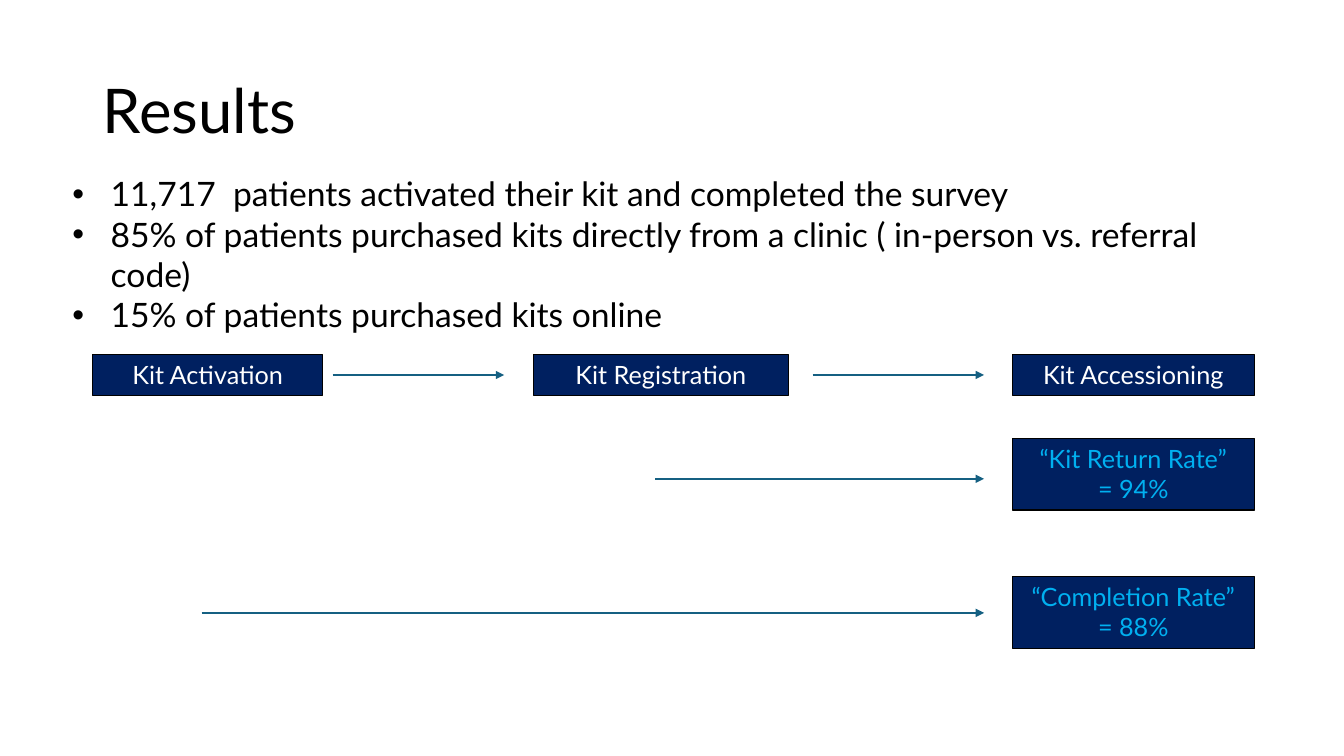
from pptx import Presentation
from pptx.dml.color import RGBColor as RGB
from pptx.enum.shapes import MSO_CONNECTOR as CONNECTOR, MSO_SHAPE as SHAPE
from pptx.enum.text import MSO_ANCHOR as ANCHOR, MSO_AUTO_SIZE as AUTO_SIZE, PP_ALIGN as ALIGN
from pptx.oxml import parse_xml
from pptx.oxml.ns import nsdecls
from pptx.util import Pt

PX = 9144
COLORS = {"text": "000000", "navy": "002060", "white": "FFFFFF",
          "rate": "00B0F0", "arrow": "156082"}


def color(name):
    return RGB.from_string(COLORS[name])


def write(box, lines, size, ink, frame_format, para_format):
    frame = box.text_frame
    for name, value in {"word_wrap": True, **frame_format}.items():
        setattr(frame, name, value)
    for index, line in enumerate(lines):
        para = frame.add_paragraph() if index else frame.paragraphs[0]
        for name, value in para_format.items():
            setattr(para, name, value)
        span = para.add_run()
        span.text = line
        for name, value in {"name": "Lato", "size": Pt(size)}.items():
            setattr(span.font, name, value)
        span.font.color.rgb = color(ink)


deck = Presentation()
deck.slide_width, deck.slide_height = 1333 * PX, 750 * PX
page = deck.slides.add_slide(deck.slide_layouts[6])
shapes = page.shapes

title = shapes.add_textbox(92 * PX, 40 * PX, 1150 * PX, 145 * PX)
write(title, ["Results"], 44, "text",
      {"vertical_anchor": ANCHOR.MIDDLE}, {"line_spacing": 0.9})

FINDINGS = [
    "11,717  patients activated their kit and completed the survey",
    "85% of patients purchased kits directly from a clinic ( in-person vs. referral code)",
    "15% of patients purchased kits online",
]
findings = shapes.add_textbox(62 * PX, 167 * PX, 1210 * PX, 131 * PX)
write(findings, FINDINGS, 24, "text", {"auto_size": AUTO_SIZE.SHAPE_TO_FIT_TEXT}, {})
for para in findings.text_frame.paragraphs:
    properties = para._p.get_or_add_pPr()
    properties.set("marL", str(38 * PX))
    properties.set("indent", str(-38 * PX))
    properties.append(parse_xml(f'<a:buFont {nsdecls("a")} typeface="Arial"/>'))
    properties.append(parse_xml(f'<a:buChar {nsdecls("a")} char="•"/>'))

STEP_TOP, STEP_HEIGHT, RATE_HEIGHT = 352, 40, 71
LAST_LEFT, LAST_WIDTH = 1004, 240
BOXES = [
    (92, STEP_TOP, 228, STEP_HEIGHT, "white", ["Kit Activation"]),
    (529, STEP_TOP, 253, STEP_HEIGHT, "white", ["Kit Registration"]),
    (LAST_LEFT, STEP_TOP, LAST_WIDTH, STEP_HEIGHT, "white", ["Kit Accessioning"]),
    (LAST_LEFT, 435, LAST_WIDTH, RATE_HEIGHT, "rate", ["“Kit Return Rate”", "= 94%"]),
    (LAST_LEFT, 572, LAST_WIDTH, RATE_HEIGHT, "rate", ["“Completion Rate”", "= 88%"]),
]
for left, top, width, height, ink, lines in BOXES:
    box = shapes.add_shape(SHAPE.RECTANGLE, left * PX, top * PX, width * PX, height * PX)
    box.shadow.inherit = False
    box.fill.solid()
    box.fill.fore_color.rgb = color("navy")
    box.line.color.rgb = color("text")
    box.line.width = Pt(0.75)
    write(box, lines, 18, ink,
          {"vertical_anchor": ANCHOR.TOP, "auto_size": AUTO_SIZE.SHAPE_TO_FIT_TEXT},
          {"alignment": ALIGN.CENTER})

ARROW_END = 976
STEP_MIDDLE = STEP_TOP + STEP_HEIGHT // 2
ARROWS = [
    (330, 500, STEP_MIDDLE),
    (806, ARROW_END, STEP_MIDDLE),
    (650, ARROW_END, 475),
    (200, ARROW_END, 608),
]
for start, end, level in ARROWS:
    arrow = shapes.add_connector(CONNECTOR.STRAIGHT, start * PX, level * PX, end * PX, level * PX)
    arrow.line.color.rgb = color("arrow")
    arrow.line.width = Pt(1.5)
    arrow.line._get_or_add_ln().append(
        parse_xml(f'<a:tailEnd {nsdecls("a")} type="triangle"/>'))
    arrow._element.spPr.append(parse_xml(f'<a:effectLst {nsdecls("a")}/>'))

deck.save("out.pptx")
